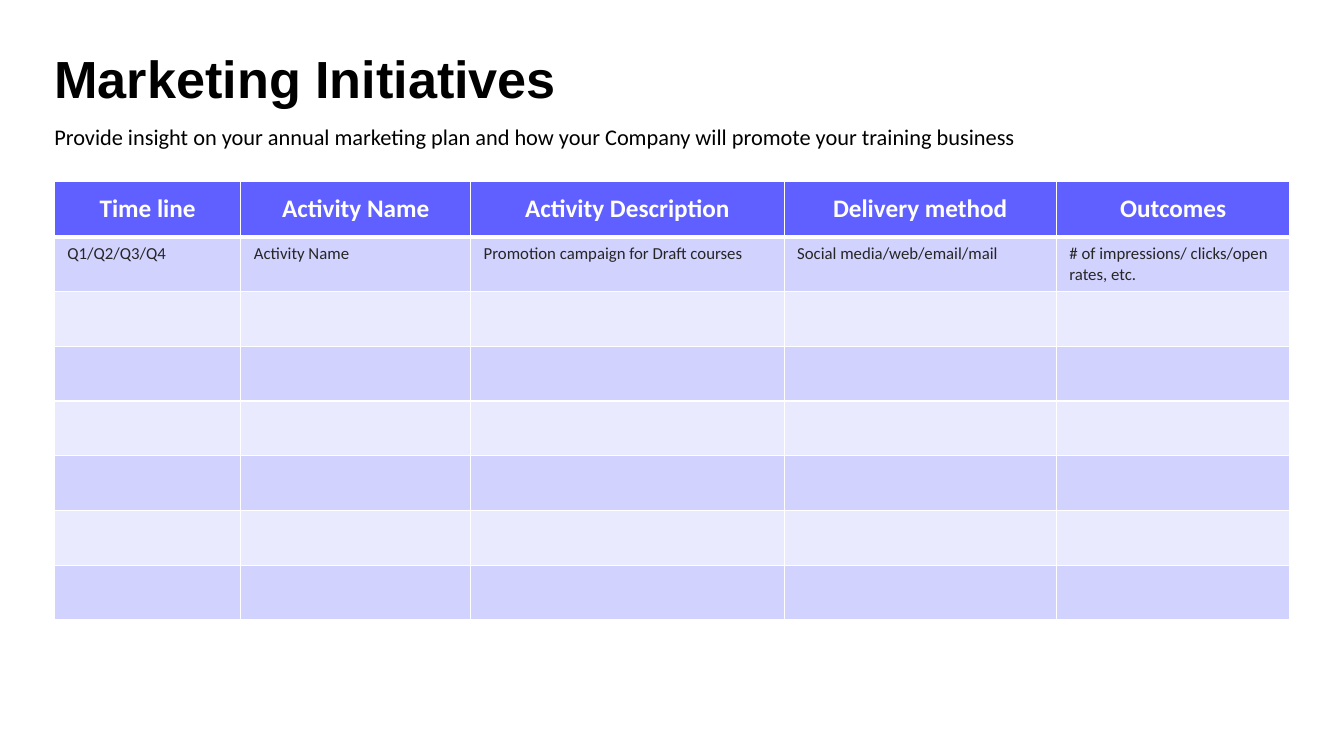
from dataclasses import dataclass

from lxml import etree
from pptx import Presentation
from pptx.dml.color import RGBColor
from pptx.enum.text import MSO_ANCHOR, PP_ALIGN
from pptx.oxml.ns import qn
from pptx.util import Cm, Pt

LEFT, CENTER = PP_ALIGN.LEFT, PP_ALIGN.CENTER
TOP, MIDDLE = MSO_ANCHOR.TOP, MSO_ANCHOR.MIDDLE


@dataclass(frozen=True)
class Theme:
    black: str = "000000"
    white: str = "FFFFFF"
    body: str = "262626"
    header_fill: str = "5F60FF"
    bands: tuple[str, str] = ("D2D2FF", "EAEAFF")
    heading_font: str = "Arial"
    body_font: str = "Calibri"
    title_size: float = 37.3
    subtitle_size: float = 16
    header_size: float = 18
    cell_size: float = 12
    thin: float = 1
    thick: float = 3


@dataclass(frozen=True)
class TextStyle:
    font: str
    size: float
    color: str
    bold: bool = False
    align: PP_ALIGN = LEFT


@dataclass(frozen=True)
class Heading:
    text: str
    top: float
    height: float
    style: TextStyle
    line_spacing: float = 1.0


@dataclass(frozen=True)
class Column:
    title: str
    example: str
    width: float


THEME = Theme()
MARGIN, CONTENT_WIDTH = 1.37, 31.14
TABLE_TOP, HEADER_HEIGHT, ROW_HEIGHT = 4.57, 1.4, 1.38
BODY_ROWS = 7

HEADER_STYLE = TextStyle(THEME.body_font, THEME.header_size, THEME.white, True, CENTER)
CELL_STYLE = TextStyle(THEME.body_font, THEME.cell_size, THEME.body)

HEADINGS = [
    Heading("Marketing Initiatives", 1.35, 1.45,
            TextStyle(THEME.heading_font, THEME.title_size, THEME.black, True), 0.9),
    Heading("Provide insight on your annual marketing plan and how your Company "
            "will promote your training business", 3.1, 0.8,
            TextStyle(THEME.body_font, THEME.subtitle_size, THEME.black)),
]

COLUMNS = [
    Column("Time line", "Q1/Q2/Q3/Q4", 4.7),
    Column("Activity Name", "Activity Name", 5.79),
    Column("Activity Description", "Promotion campaign for Draft courses", 7.9),
    Column("Delivery method", "Social media/web/email/mail", 6.86),
    Column("Outcomes", "# of impressions/ clicks/open rates, etc.", 5.89),
]


def style_paragraph(p, style: TextStyle) -> None:
    p.alignment = style.align
    p.font.name = style.font
    p.font.size = Pt(style.size)
    p.font.bold = style.bold
    p.font.color.rgb = RGBColor.from_string(style.color)


def add_heading(s, heading: Heading) -> None:
    box = s.shapes.add_textbox(Cm(MARGIN), Cm(heading.top),
                               Cm(CONTENT_WIDTH), Cm(heading.height))
    tf = box.text_frame
    tf.word_wrap = True
    tf.margin_left = tf.margin_right = tf.margin_top = tf.margin_bottom = 0
    p = tf.paragraphs[0]
    p.text = heading.text
    p.line_spacing = heading.line_spacing
    style_paragraph(p, heading.style)


def set_borders(cell, top: float, bottom: float) -> None:
    tc_pr = cell._tc.get_or_add_tcPr()
    widths = {"lnL": THEME.thin, "lnR": THEME.thin, "lnT": top, "lnB": bottom}
    for side, width in widths.items():
        ln = etree.SubElement(tc_pr, qn(f"a:{side}"), w=str(Pt(width)))
        fill = etree.SubElement(ln, qn("a:solidFill"))
        etree.SubElement(fill, qn("a:srgbClr"), val=THEME.white)


def fill_cell(cell, text: str, row: int) -> None:
    is_header = row == 0
    # The rule under the header is shared by the first two rows
    set_borders(cell,
                top=THEME.thick if row == 1 else THEME.thin,
                bottom=THEME.thick if is_header else THEME.thin)
    color = THEME.header_fill if is_header else THEME.bands[(row - 1) % 2]
    cell.fill.solid()
    cell.fill.fore_color.rgb = RGBColor.from_string(color)
    cell.margin_left = cell.margin_right = Cm(0.33)
    cell.margin_top = cell.margin_bottom = Cm(0.17)
    cell.vertical_anchor = MIDDLE if is_header else TOP
    cell.text = text
    style_paragraph(cell.text_frame.paragraphs[0],
                    HEADER_STYLE if is_header else CELL_STYLE)


def add_plan_table(s, columns: list[Column]) -> None:
    height = HEADER_HEIGHT + BODY_ROWS * ROW_HEIGHT
    table = s.shapes.add_table(BODY_ROWS + 1, len(columns), Cm(MARGIN), Cm(TABLE_TOP),
                               Cm(CONTENT_WIDTH), Cm(height)).table
    for row in range(BODY_ROWS + 1):
        table.rows[row].height = Cm(ROW_HEIGHT if row else HEADER_HEIGHT)
    for c, column in enumerate(columns):
        table.columns[c].width = Cm(column.width)
        texts = [column.title, column.example] + [""] * (BODY_ROWS - 1)
        for row, text in enumerate(texts):
            fill_cell(table.cell(row, c), text, row)


def main() -> None:
    prs = Presentation()
    prs.slide_width, prs.slide_height = Cm(33.87), Cm(19.05)
    s = prs.slides.add_slide(prs.slide_layouts[6])

    # Title and subtitle
    for heading in HEADINGS:
        add_heading(s, heading)

    # Marketing plan
    add_plan_table(s, COLUMNS)

    prs.save("out.pptx")


if __name__ == "__main__":
    main()
